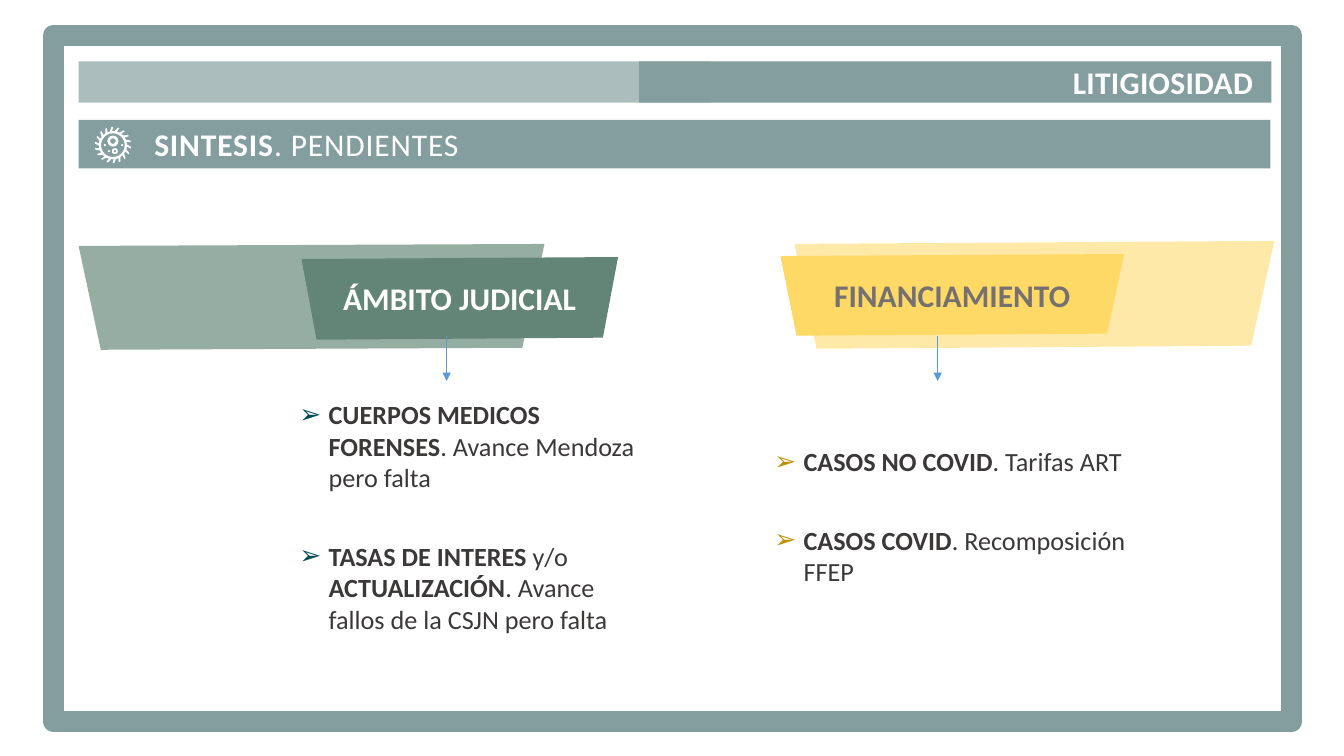
import math

import pptx
import pptx.dml.color
import pptx.enum.shapes
import pptx.enum.text
import pptx.oxml
import pptx.oxml.ns
import pptx.util

Inches = pptx.util.Inches
Pt = pptx.util.Pt
SHAPE = pptx.enum.shapes.MSO_SHAPE
ALIGN = pptx.enum.text.PP_ALIGN
MIDDLE = pptx.enum.text.MSO_ANCHOR.MIDDLE

TEAL, GREEN, YELLOW, WHITE = "849E9F", "638577", "FFD966", "FFFFFF"


def paint(fill, colour, alpha=None):
    """Give a shape, line or font fill a solid colour."""
    fill.solid()
    fill.fore_color.rgb = pptx.dml.color.RGBColor.from_string(colour)
    if alpha:
        colour_node = fill._xPr.find(pptx.oxml.ns.qn("a:solidFill"))[0]
        pptx.oxml.ns.qn("a:alpha")
        node = pptx.oxml.parse_xml(
            f'<a:alpha {pptx.oxml.ns.nsdecls("a")} val="{alpha * 1000}"/>')
        colour_node.append(node)


def write(para, text, size=22.5, colour=WHITE, bold=True, spacing=0):
    span = para.add_run()
    span.text = text
    span.font.name = "Calibri"
    span.font.size = Pt(size)
    span.font.bold = bold
    paint(span.font.fill, colour)
    if spacing:
        span.font._element.set("spc", str(round(spacing * 100)))


deck = pptx.Presentation()
deck.slide_width, deck.slide_height = Inches(13.33), Inches(7.5)
page = deck.slides.add_slide(deck.slide_layouts[5])
shapes = page.shapes

# Title bar
title = shapes.title
title.left, title.top = Inches(0.78), Inches(1.19)
title.width, title.height = Inches(11.82), Inches(0.48)
paint(title.fill, TEAL)
frame = title.text_frame
frame.auto_size = pptx.enum.text.MSO_AUTO_SIZE.NONE
frame.vertical_anchor = MIDDLE
frame.margin_left = Inches(0.75)
frame.margin_top = frame.margin_right = frame.margin_bottom = 0
para = frame.paragraphs[0]
para.alignment = ALIGN.LEFT
para.space_before = Pt(0.9)
write(para, "SINTESIS", spacing=0.6)
write(para, ". PENDIENTES", bold=False, spacing=0.6)

# Pale slabs behind the headings
slabs = [
    (YELLOW, 56, [(12.64, 2.39), (7.88, 2.42), (8.1, 3.46), (12.41, 3.43)]),
    (GREEN, 67, [(5.4, 2.42), (0.78, 2.44), (1, 3.47), (5.18, 3.45)]),
]
for colour, alpha, corners in slabs:
    points = [(Inches(x), Inches(y)) for x, y in corners]
    builder = shapes.build_freeform(*points[0])
    builder.add_line_segments(points[1:])
    paint(builder.convert_to_shape().fill, colour, alpha)

# Page border
border = shapes.add_shape(SHAPE.RECTANGLE, Inches(0.53), Inches(0.35),
                          Inches(12.28), Inches(6.81))
border.fill.background()
border.line.width = Pt(15)
paint(border.line.fill, TEAL)

# Section bar in two tones
for left, alpha in [(0.78, 67), (6.34, None)]:
    bar = shapes.add_shape(SHAPE.RECTANGLE, Inches(left), Inches(0.61),
                           Inches(6.27), Inches(0.41))
    paint(bar.fill, TEAL, alpha)
frame = bar.text_frame
frame.word_wrap = False
frame.vertical_anchor = MIDDLE
frame.margin_left = frame.margin_top = frame.margin_bottom = 0
frame.margin_right = Inches(0.18)
para = frame.paragraphs[0]
para.alignment = ALIGN.RIGHT
para.space_before = Pt(0.9)
write(para, "LITIGIOSIDAD", spacing=0.2)

# Virus icon: rings and dots (centre x, centre y, radius, rim share of the width)
icon_x, icon_y = 1.12, 1.44
rings = [(icon_x, icon_y, 0.14, 0.08), (1.12, 1.4, 0.055, 0.25),
         (1.14, 1.5, 0.03, 0.3), (1.04, 1.44, 0.01, None),
         (1.08, 1.5, 0.01, None), (1.21, 1.44, 0.01, None)]
for x, y, radius, rim in rings:
    ring = shapes.add_shape(SHAPE.DONUT if rim else SHAPE.OVAL,
                            Inches(x - radius), Inches(y - radius),
                            Inches(2 * radius), Inches(2 * radius))
    if rim:
        ring.adjustments[0] = rim
    paint(ring.fill, WHITE)

# Virus icon: slanted spikes around the rim
spike_count = 18
builder = None
for number in range(spike_count):
    turn = 2 * math.pi * number / spike_count
    points = [(Inches(icon_x + radius * math.cos(turn + shift)),
               Inches(icon_y + radius * math.sin(turn + shift)))
              for radius, shift in [(0.13, -0.1), (0.18, 0.1),
                                    (0.18, 0.19), (0.13, 0.1)]]
    if builder is None:
        builder = shapes.build_freeform(*points[0])
    else:
        builder.move_to(*points[0])
    builder.add_line_segments(points[1:])
paint(builder.convert_to_shape().fill, WHITE)

# Headings
headings = [
    ("ÁMBITO JUDICIAL", GREEN, WHITE,
     [(6.13, 2.55), (2.99, 2.57), (3.14, 3.37), (5.98, 3.35)]),
    ("FINANCIAMIENTO", YELLOW, "767171",
     [(11.15, 2.52), (7.74, 2.54), (7.9, 3.33), (10.98, 3.31)]),
]
for text, colour, text_colour, corners in headings:
    points = [(Inches(x), Inches(y)) for x, y in corners]
    builder = shapes.build_freeform(*points[0])
    builder.add_line_segments(points[1:])
    heading = builder.convert_to_shape()
    paint(heading.fill, colour)
    heading.text_frame.word_wrap = True
    heading.text_frame.vertical_anchor = MIDDLE
    para = heading.text_frame.paragraphs[0]
    para.alignment = ALIGN.CENTER
    write(para, text, colour=text_colour)

# Bulleted lists: each item is a row of (text, bold) spans
lists = [
    ((7.68, 4.41, 3.52, 1.42), 0.29, "BF9000", [
        [("CASOS NO COVID", True), (". Tarifas ART", False)],
        [("CASOS COVID", True), (". Recomposición FFEP", False)]]),
    ((2.68, 3.94, 3.76, 2.37), 0.58, "004B53", [
        [("CUERPOS MEDICOS FORENSES", True),
         (". Avance Mendoza pero falta", False)],
        [("TASAS DE INTERES", True), (" y/o ", False), ("ACTUALIZACIÓN", True),
         (". Avance fallos de la CSJN pero falta", False)]]),
]
for place, indent, bullet_colour, items in lists:
    box = shapes.add_textbox(*[Inches(length) for length in place])
    frame = box.text_frame
    frame.word_wrap = True
    frame.auto_size = pptx.enum.text.MSO_AUTO_SIZE.SHAPE_TO_FIT_TEXT
    frame.vertical_anchor = MIDDLE
    frame.margin_left = frame.margin_right = 0
    frame.margin_top = frame.margin_bottom = 0
    for index, item in enumerate(items):
        para = frame.add_paragraph() if index else frame.paragraphs[0]
        para.space_before = para.space_after = Pt(16.9)
        props = para._p.get_or_add_pPr()
        props.set("marL", str(Inches(indent)))
        props.set("indent", str(Inches(-0.29)))
        for tag in (f'<a:buClr {{}}><a:srgbClr val="{bullet_colour}"/></a:buClr>',
                    '<a:buFont {} typeface="Wingdings"/>'.replace("Wingdings", "Calibri"),
                    '<a:buChar {} char="➢"/>'):
            props.append(pptx.oxml.parse_xml(
                tag.format(pptx.oxml.ns.nsdecls("a"))))
        for text, bold in item:
            write(para, text, size=18.7, colour="3B3838", bold=bold)

# Arrows from the headings to the lists
for x in (4.43, 9.3):
    arrow = shapes.add_connector(pptx.enum.shapes.MSO_CONNECTOR.STRAIGHT,
                                 Inches(x), Inches(3.33), Inches(x), Inches(3.78))
    arrow.line.width = Pt(0.5)
    paint(arrow.line.fill, "5B9BD5")
    for parent, tag in ((arrow.line._ln, '<a:tailEnd {} type="triangle"/>'),
                        (arrow._element.spPr, "<a:effectLst {}/>")):
        parent.append(pptx.oxml.parse_xml(tag.format(pptx.oxml.ns.nsdecls("a"))))

# Flat look: no shadows, and an outline on the border only
flat_kinds = (pptx.enum.shapes.MSO_SHAPE_TYPE.AUTO_SHAPE,
              pptx.enum.shapes.MSO_SHAPE_TYPE.FREEFORM)
for shape in shapes:
    if shape.shape_type in flat_kinds:
        shape.shadow.inherit = False
        if shape.shape_id != border.shape_id:
            shape.line.fill.background()

deck.save("out.pptx")
